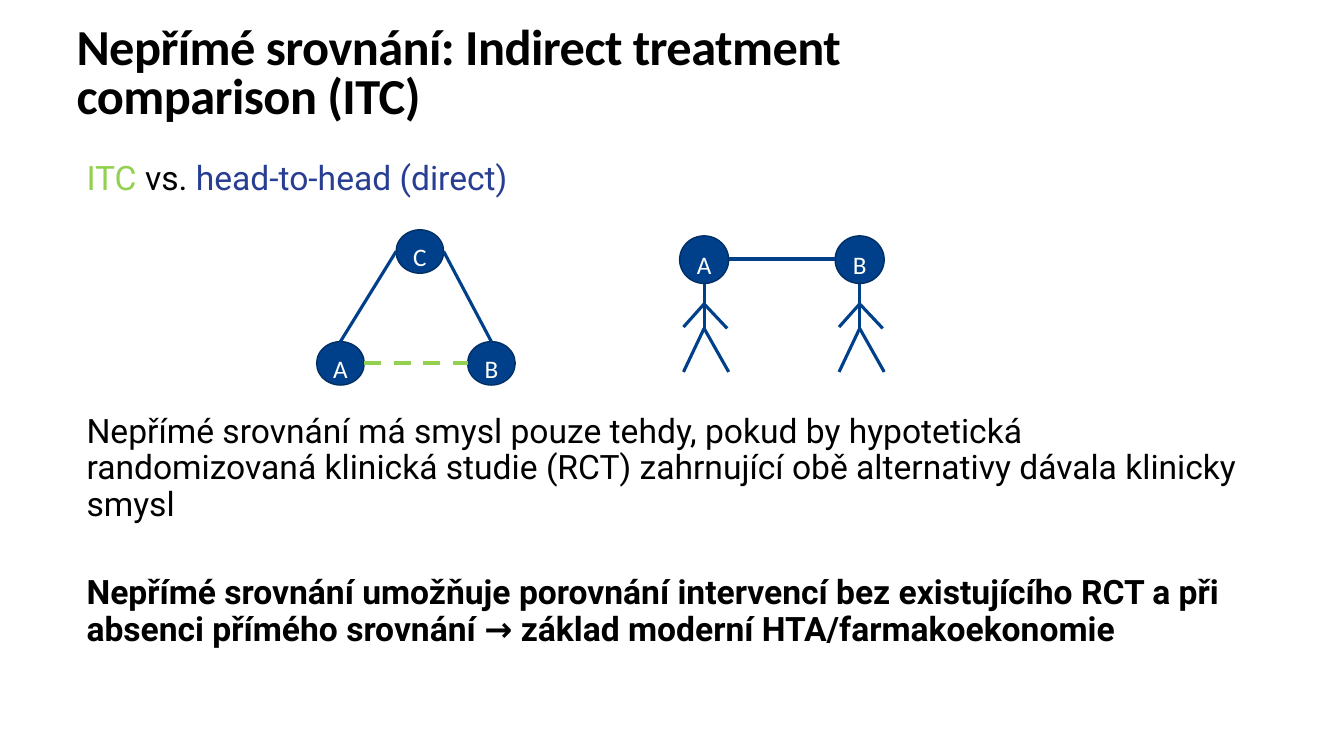
import pptx
import pptx.util
import pptx.dml.color
import pptx.enum.dml
import pptx.enum.shapes
import pptx.enum.text
import pptx.oxml.ns
import lxml.etree

RGBColor = pptx.dml.color.RGBColor
Inches = pptx.util.Inches
Pt = pptx.util.Pt
ANCHOR = pptx.enum.text.MSO_ANCHOR

BLACK = RGBColor(0, 0, 0)
WHITE = RGBColor(255, 255, 255)
GREEN = RGBColor(0x92, 0xD0, 0x50)
INDIGO = RGBColor(0x28, 0x3E, 0x92)
BLUE = RGBColor(0x00, 0x3F, 0x8A)
NAVY = RGBColor(0x00, 0x2F, 0x66)


def add_run(p, text, size=24, font='Roboto', color=BLACK, bold=False, spacing=None):
    r = p.add_run()
    r.text = text
    r.font.size = Pt(size)
    r.font.name = font
    r.font.bold = bold
    r.font.color.rgb = color
    if spacing is not None:
        r.font._element.set('spc', str(round(spacing * 100)))
    return r


def set_margins(tf, left=0, top=0, right=0, bottom=0):
    tf.margin_left, tf.margin_top = Inches(left), Inches(top)
    tf.margin_right, tf.margin_bottom = Inches(right), Inches(bottom)


def add_line(shapes, start, end, color=BLUE, width=2.25, dash=None):
    c = shapes.add_connector(pptx.enum.shapes.MSO_CONNECTOR.STRAIGHT,
                             *[Inches(v) for v in (*start, *end)])
    c.line.color.rgb = color
    c.line.width = Pt(width)
    if dash is not None:
        c.line.dash_style = dash
    lxml.etree.SubElement(c._element.spPr, pptx.oxml.ns.qn('a:effectLst'))


def add_node(shapes, letter, x, y, w, h):
    sp = shapes.add_shape(pptx.enum.shapes.MSO_SHAPE.OVAL,
                          *[Inches(v) for v in (x, y, w, h)])
    sp.shadow.inherit = False
    sp.fill.solid()
    sp.fill.fore_color.rgb = BLUE
    sp.line.color.rgb = NAVY
    sp.line.width = Pt(1)
    tf = sp.text_frame
    tf.word_wrap = False
    tf.vertical_anchor = ANCHOR.MIDDLE
    set_margins(tf, top=0.1)
    p = tf.paragraphs[0]
    p.alignment = pptx.enum.text.PP_ALIGN.CENTER
    add_run(p, letter, size=18, font='Calibri', color=WHITE)


def add_title(s, x, y, w, h):
    sp = s.shapes.title
    sp.left, sp.top, sp.width, sp.height = [Inches(v) for v in (x, y, w, h)]
    tf = sp.text_frame
    tf.word_wrap = True
    tf.auto_size = pptx.enum.text.MSO_AUTO_SIZE.NONE
    tf.vertical_anchor = ANCHOR.BOTTOM
    set_margins(tf)
    p = tf.paragraphs[0]
    p.alignment = pptx.enum.text.PP_ALIGN.LEFT
    p.line_spacing = 0.8
    add_run(p, 'Nepřímé srovnání: Indirect treatment comparison (ITC)',
            size=36, font='Calibri', bold=True, spacing=-0.4)


def add_body(s, x, y, w, h):
    paragraphs = [
        (0, [('ITC', {'color': GREEN}), (' vs. ', {}),
             ('head-to-head (direct)', {'color': INDIGO})]),
        (155, [('Nepřímé srovnání má smysl pouze tehdy, pokud by hypotetická '
                'randomizovaná klinická studie (RCT) zahrnující obě alternativy '
                'dávala klinicky smysl', {})]),
        (37.5, [('Nepřímé srovnání umožňuje porovnání intervencí bez existujícího '
                 'RCT a při absenci přímého srovnání → základ moderní '
                 'HTA/farmakoekonomie', {'bold': True})]),
    ]
    tf = s.shapes.add_textbox(*[Inches(v) for v in (x, y, w, h)]).text_frame
    tf.word_wrap = True
    set_margins(tf, 0.1, 0.05, 0.1, 0.05)
    for i, (space, runs) in enumerate(paragraphs):
        p = tf.add_paragraph() if i else tf.paragraphs[0]
        p.line_spacing = 0.9
        p.space_before = Pt(space)
        for text, fmt in runs:
            add_run(p, text, **fmt)


def add_triangle(s, x, y, w, h):
    shapes = s.shapes.add_group_shape().shapes
    nw, nh = 0.24 * w, 0.28 * h
    apex, base, right = x + 0.4 * w, y + h - nh, x + w - nw
    for letter, left, top in (('C', apex, y), ('A', x, base), ('B', right, base)):
        add_node(shapes, letter, left, top, nw, nh)
    middle = y + nh / 2
    add_line(shapes, (x + nw / 2, base), (apex, middle))
    add_line(shapes, (right + nw / 2, base), (apex + nw, middle))
    add_line(shapes, (x + nw, base + nh / 2), (right, base + nh / 2), color=GREEN,
             width=3, dash=pptx.enum.dml.MSO_LINE.DASH)


def add_figure(shapes, letter, x, y, w, h):
    head = 0.35 * h
    center, shoulder, hip = x + w / 2, y + 0.5 * h, y + 0.68 * h
    add_line(shapes, (center, y + head), (center, hip))
    add_line(shapes, (center, shoulder), (x + 0.08 * w, y + 0.67 * h))
    add_line(shapes, (center, shoulder), (x + 0.97 * w, hip))
    for foot in (x + 0.08 * w, x + w):
        add_line(shapes, (center, hip), (foot, y + h))
    add_node(shapes, letter, x, y, w, head)


def add_figures(s, x, y, w, h):
    shapes = s.shapes.add_group_shape().shapes
    fw = 0.24 * w
    right = x + w - fw
    for letter, left in (('A', x), ('B', right)):
        add_figure(shapes, letter, left, y, fw, h)
    level = y + 0.17 * h
    add_line(shapes, (x + fw, level), (right, level))


def main():
    prs = pptx.Presentation()
    prs.slide_width, prs.slide_height = Inches(13.33), Inches(7.5)
    s = prs.slides.add_slide(prs.slide_layouts[5])
    add_title(s, 0.76, 0.25, 8.86, 0.98)
    add_body(s, 0.76, 1.55, 11.81, 5.28)
    add_triangle(s, 3.14, 2.28, 1.97, 1.54)
    add_figures(s, 6.74, 2.34, 2.03, 1.35)
    prs.save("out.pptx")


if __name__ == "__main__":
    main()
